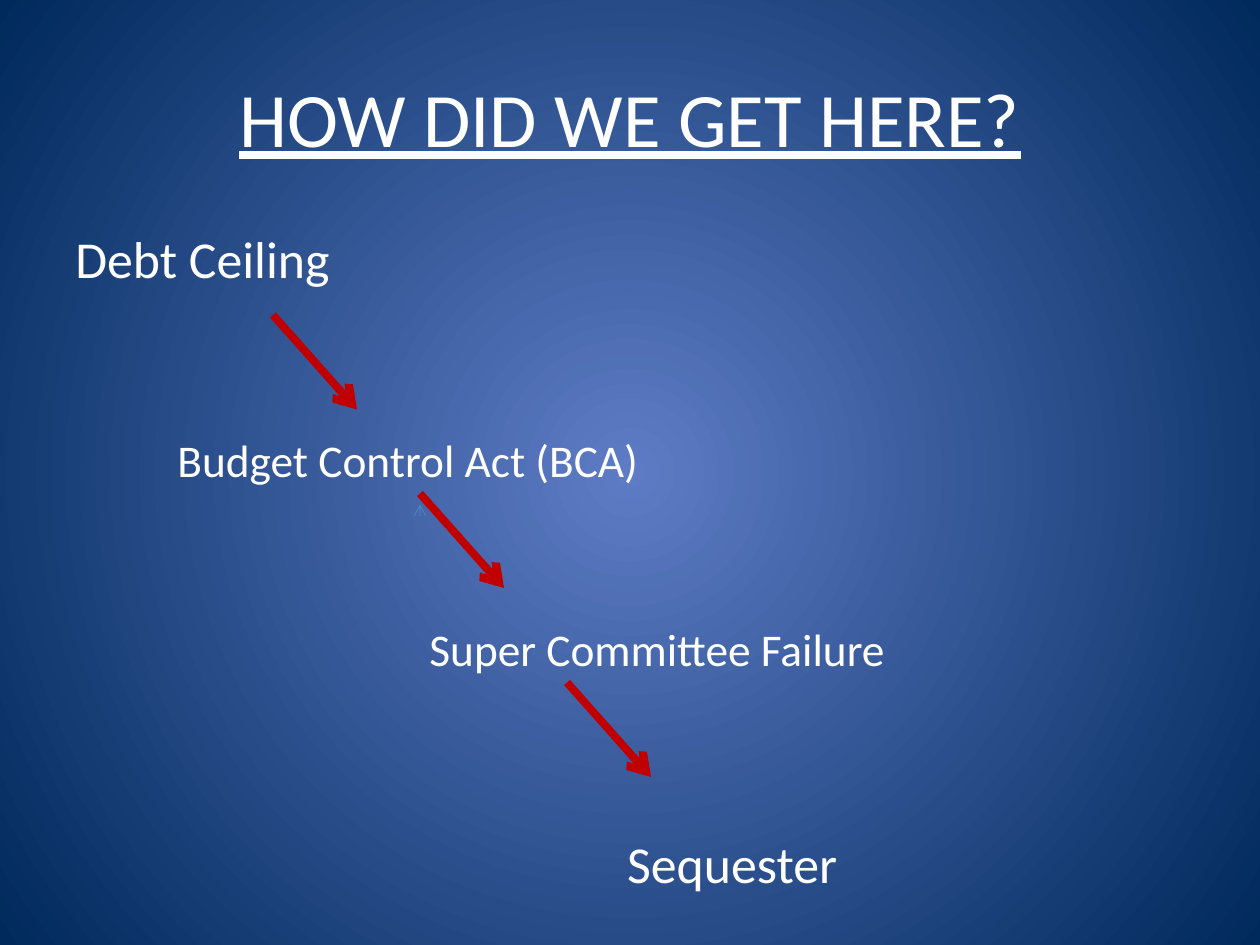
from dataclasses import dataclass

from lxml import etree
from pptx import Presentation
from pptx import util as u
from pptx.dml.color import RGBColor
from pptx.enum import shapes, text
from pptx.oxml import ns


@dataclass(frozen=True)
class Theme:
    font: str = "Calibri"
    ink: str = "FFFFFF"
    glow: str = "5E7CC5"
    edge: str = "00295C"
    arrow: str = "C00000"
    thin_arrow: str = "4B7EBC"
    title_pt: float = 44
    major_pt: float = 29.6
    minor_pt: float = 25.9


THEME = Theme()
WIDTH, HEIGHT = u.Inches(10), u.Inches(7.5)
COL, ROW = WIDTH / 60, HEIGHT / 90

# Step, type size, left indent (inches), space before (points)
STEPS = [
    ("Debt Ceiling", THEME.major_pt, 0, 0),
    ("Budget Control Act (BCA)", THEME.minor_pt, 0.81, 82),
    ("Super Committee Failure", THEME.minor_pt, 2.81, 77),
    ("Sequester", THEME.major_pt, 4.38, 89),
]
# Column and row where each arrow between steps starts
ARROW_STARTS = [(13, 30), (20, 47), (27, 65)]
ARROW_SPAN = (4, 9)


def sub(parent, tag, **attrs):
    return etree.SubElement(parent, ns.qn(tag), attrs)


def paint_background(slide):
    fill = slide.background.fill
    fill.gradient()
    for stop, color in zip(fill.gradient_stops, (THEME.glow, THEME.edge)):
        stop.color.rgb = RGBColor.from_string(color)
    # Turn the linear gradient into a circular one
    grad = slide.element.find(".//" + ns.qn("a:gradFill"))
    grad.remove(grad.find(ns.qn("a:lin")))
    centre = sub(grad, "a:path", path="circle")
    sub(centre, "a:fillToRect", l="50000", t="50000", r="50000", b="50000")


def add_text_frame(slide, left, top, width, height, anchor):
    box = slide.shapes.add_textbox(*map(u.Inches, (left, top, width, height)))
    tf = box.text_frame
    tf.word_wrap = True
    tf.vertical_anchor = anchor
    return tf


def write(p, words, size, **formats):
    r = p.add_run()
    r.text = words
    r.font.color.rgb = RGBColor.from_string(THEME.ink)
    for name, value in {"name": THEME.font, "size": u.Pt(size), **formats}.items():
        setattr(r.font, name, value)


def add_steps(slide):
    tf = add_text_frame(slide, 0.5, 1.75, 9, 5.17, text.MSO_ANCHOR.TOP)
    for i, (words, size, indent, gap) in enumerate(STEPS):
        p = tf.add_paragraph() if i else tf.paragraphs[0]
        p.space_before = u.Pt(gap)
        p._p.get_or_add_pPr().set("marL", str(u.Inches(indent)))
        write(p, words, size)


def add_arrow(slide, start, span, color, weight):
    (x, y), (dx, dy) = start, span
    ends = (x * COL, y * ROW, (x + dx) * COL, (y + dy) * ROW)
    sp = slide.shapes.add_connector(
        shapes.MSO_CONNECTOR.STRAIGHT, *(round(v) for v in ends))
    sp.line.color.rgb = RGBColor.from_string(color)
    sp.line.width = u.Pt(weight)
    sub(sp.line._get_or_add_ln(), "a:tailEnd", type="arrow")
    sub(sp._element.spPr, "a:effectLst")


def main():
    prs = Presentation()
    prs.slide_width, prs.slide_height = WIDTH, HEIGHT
    slide = prs.slides.add_slide(prs.slide_layouts[6])
    paint_background(slide)

    # Title
    tf = add_text_frame(slide, 0.5, 0.3, 9, 1.25, text.MSO_ANCHOR.MIDDLE)
    tf.paragraphs[0].alignment = text.PP_ALIGN.CENTER
    write(tf.paragraphs[0], "HOW DID WE GET HERE?", THEME.title_pt, underline=True)

    # Staircase of steps, joined by arrows
    add_steps(slide)
    add_arrow(slide, (20, 49), (0, -1), THEME.thin_arrow, 0.75)
    for start in ARROW_STARTS:
        add_arrow(slide, start, ARROW_SPAN, THEME.arrow, 4.5)

    prs.save("out.pptx")


if __name__ == "__main__":
    main()
